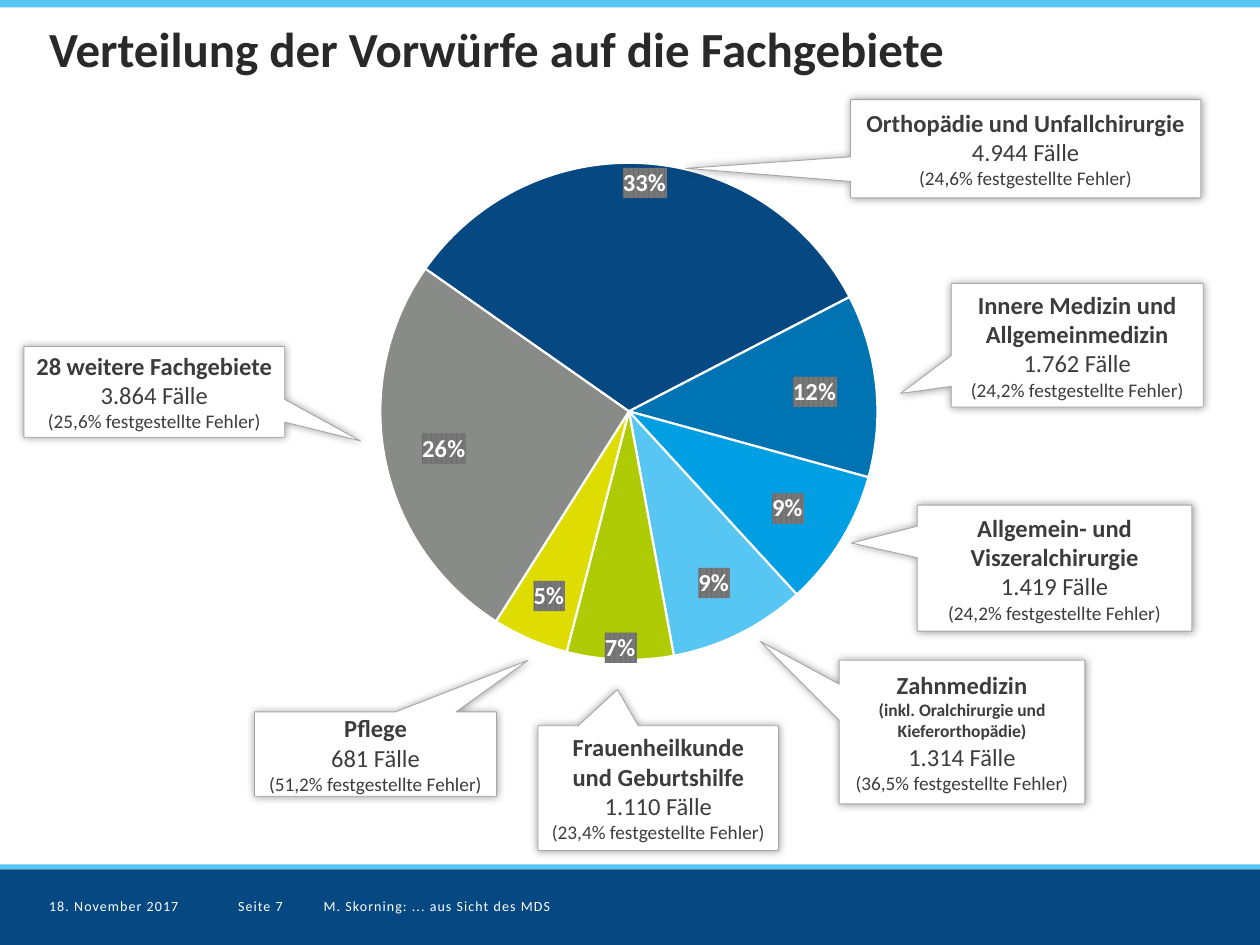
from math import cos, radians, sin

from lxml import etree
from pptx import Presentation
from pptx.chart.data import CategoryChartData
from pptx.dml.color import RGBColor
from pptx.enum.chart import XL_CHART_TYPE as ChartType, XL_LABEL_POSITION as LabelPosition
from pptx.enum.shapes import MSO_SHAPE as Shape
from pptx.enum.text import MSO_ANCHOR as Anchor, PP_ALIGN as Align
from pptx.oxml import parse_xml
from pptx.oxml.ns import nsdecls, qn
from pptx.util import Inches, Pt

FONT = "Calibri"
WHITE, TEXT, NAVY, SKY = "FFFFFF", "3B3C3B", "064882", "58C6F2"

TITLE = "Verteilung der Vorwürfe auf die Fachgebiete"

# share in percent, colour, label distance from the centre in radii
SLICES = [
    (33, NAVY, 0.92),
    (12, "0074B2", 0.75),
    (9, "009EE3", 0.75),
    (9, SKY, 0.77),
    (7, "AECB06", 0.95),
    (5, "DEDC00", 0.81),
    (26, "898B89", 0.76),
]
START_ANGLE = 305
CHART = (0.82, 0.85, 8.36, 4.84)
PIE = (3.02, 1.29, 3.95, 3.95)

# heading, note, cases, confirmed errors, place, callout tip
CALLOUTS = [
    ("Innere Medizin und Allgemeinmedizin", "", "1.762", "24,2%",
     (7.55, 2.25, 2, 0.98), (-0.7, 0.39)),
    ("Allgemein- und Viszeralchirurgie", "", "1.419", "24,2%",
     (7.28, 4.01, 2.18, 1), (-0.74, -0.2)),
    ("Orthopädie und Unfallchirurgie", "", "4.944", "24,6%",
     (6.75, 0.79, 2.78, 0.78), (-0.97, 0.2)),
    ("Zahnmedizin", "(inkl. Oralchirurgie und Kieferorthopädie)", "1.314", "36,5%",
     (6.66, 5.24, 1.95, 1.14), (-0.82, -0.63)),
    ("Pflege", "", "681", "51,2%",
     (2.02, 5.65, 1.92, 0.67), (0.63, -1.11)),
    ("28 weitere Fachgebiete", "", "3.864", "25,6%",
     (0.19, 2.75, 2.07, 0.72), (0.79, 0.54)),
    ("Frauenheilkunde und Geburtshilfe", "", "1.110", "23,4%",
     (4.27, 5.76, 1.91, 0.99), (-0.17, -0.79)),
]

# text, left, width, left inset
FOOTER = [
    ("18. November 2017", 0.39, 1.5, 0),
    ("M. Skorning: ... aus Sicht des MDS", 2.47, 5.14, 0.1),
    ("Seite 7", 1.89, 0.68, 0),
]
BANDS = [(6.86, 0.04, SKY), (6.9, 0.6, NAVY), (0, 0.06, SKY)]


def color(value):
    return RGBColor.from_string(value)


def inches(values):
    return [Inches(value) for value in values]


def style(font, size, shade, bold=False):
    font.name, font.size, font.bold = FONT, Pt(size), bold
    font.color.rgb = color(shade)


def add_filled(page, kind, place, fill):
    shape = page.shapes.add_shape(kind, *inches(place))
    shape.shadow.inherit = False
    shape.fill.solid()
    shape.fill.fore_color.rgb = color(fill)
    shape.line.fill.background()
    return shape


def add_text(page, place, text, left_inset=0):
    box = page.shapes.add_textbox(*inches(place))
    frame = box.text_frame
    frame.word_wrap = True
    frame.margin_left = Inches(left_inset)
    frame.margin_right = frame.margin_top = frame.margin_bottom = 0
    frame.text = text
    return frame


def add_callout(page, heading, note, cases, errors, place, tip):
    shape = add_filled(page, Shape.RECTANGULAR_CALLOUT, place, WHITE)
    shape.adjustments[0], shape.adjustments[1] = tip
    shape.line.color.rgb = color("A6A6A6")
    shape.line.width = Pt(0.5)
    effects = shape._element.spPr.find(qn("a:effectLst"))
    effects.append(parse_xml(
        f'<a:outerShdw {nsdecls("a")} blurRad="{Pt(5)}" dist="0" dir="0" algn="ctr" '
        'rotWithShape="0"><a:srgbClr val="000000"><a:alpha val="40000"/></a:srgbClr>'
        '</a:outerShdw>'))

    frame = shape.text_frame
    frame.word_wrap = True
    frame.vertical_anchor = Anchor.MIDDLE
    head = f"{heading}\v{note}" if note else heading
    frame.text = f"{head}\n{cases} Fälle\v({errors} festgestellte Fehler)"
    for para, sizes, bold in zip(frame.paragraphs, [(14, 10), (14, 11)], [True, False]):
        para.alignment = Align.CENTER
        for span, size in zip(para.runs, sizes):
            style(span.font, size, TEXT, bold)


def place_label(label, x, y):
    """Shift a point label by x and y, in parts of the chart, and give it a patterned ground."""
    element = label._get_or_add_dLbl()
    element.find(qn("c:idx")).addnext(parse_xml(
        f'<c:layout {nsdecls("c")}><c:manualLayout><c:x val="{x:.3f}"/><c:y val="{y:.3f}"/>'
        '</c:manualLayout></c:layout>'))
    ground = parse_xml(
        f'<c:spPr {nsdecls("c", "a")}><a:pattFill prst="dkVert">'
        '<a:fgClr><a:srgbClr val="777777"/></a:fgClr>'
        '<a:bgClr><a:srgbClr val="6A6A6A"/></a:bgClr></a:pattFill></c:spPr>')
    for old in element.findall(qn("c:spPr")):
        element.remove(old)
    element.find(qn("c:txPr")).addprevious(ground)
    for tag, shown in (("c:showVal", "0"), ("c:showPercent", "1")):
        element.find(qn(tag)).set("val", shown)


def set_pie_area(chart):
    left, top, width, height = CHART
    pie_left, pie_top, pie_width, pie_height = PIE
    parts = {"x": (pie_left - left) / width, "y": (pie_top - top) / height,
             "w": pie_width / width, "h": pie_height / height}
    plot_area = chart._chartSpace.chart.plotArea
    for old in plot_area.findall(qn("c:layout")):
        plot_area.remove(old)
    layout = etree.Element(qn("c:layout"))
    manual = etree.SubElement(layout, qn("c:manualLayout"))
    modes = {"layoutTarget": "inner", "xMode": "edge", "yMode": "edge"}
    for name, value in modes.items():
        etree.SubElement(manual, qn(f"c:{name}"), val=value)
    for name, value in parts.items():
        etree.SubElement(manual, qn(f"c:{name}"), val=f"{value:.3f}")
    plot_area.insert(0, layout)


def add_pie(page):
    shares = [share for share, _, _ in SLICES]
    data = CategoryChartData()
    data.categories = [str(number) for number in range(1, len(shares) + 1)]
    data.add_series("Series 1", shares)
    chart = page.shapes.add_chart(ChartType.PIE, *inches(CHART), data).chart
    chart.has_legend = chart.has_title = False
    style(chart.font, 10, TEXT)
    set_pie_area(chart)

    plot = chart.plots[0]
    plot.vary_by_categories = True
    pie = plot._element
    for old in pie.findall(qn("c:firstSliceAng")):
        pie.remove(old)
    etree.SubElement(pie, qn("c:firstSliceAng"), val=str(START_ANGLE))

    series = plot.series[0]
    labels = series.data_labels
    labels.show_percentage, labels.show_value = True, False
    labels.number_format, labels.number_format_is_linked = "0%", False
    labels.position = LabelPosition.CENTER
    style(labels.font, 14, WHITE, True)

    radius = PIE[2] / 2
    for index, (share, fill, distance) in enumerate(SLICES):
        point = series.points[index]
        point.format.fill.solid()
        point.format.fill.fore_color.rgb = color(fill)
        point.format.line.color.rgb = color(WHITE)
        point.format.line.width = Pt(1.25)
        style(point.data_label.font, 14, WHITE, True)
        point.data_label.position = LabelPosition.CENTER
        middle = (sum(shares[:index]) + share / 2) / sum(shares)
        angle = radians(START_ANGLE + 360 * middle)
        shift = (distance - 0.5) * radius
        place_label(point.data_label, shift * sin(angle) / CHART[2],
                    -shift * cos(angle) / CHART[3])


def main():
    deck = Presentation()
    deck.slide_width, deck.slide_height = Inches(10), Inches(7.5)
    page = deck.slides.add_slide(deck.slide_layouts[6])

    for top, height, fill in BANDS:
        add_filled(page, Shape.RECTANGLE, (0, top, 10, height), fill)
    add_pie(page)

    title = add_text(page, (0.39, 0.17, 9.21, 0.77), TITLE).paragraphs[0]
    title.line_spacing = Pt(32)
    style(title.runs[0].font, 28, "292929", True)

    for callout in CALLOUTS:
        add_callout(page, *callout)
    for text, left, width, inset in FOOTER:
        frame = add_text(page, (left, 6.89, width, 0.6), text, inset)
        frame.vertical_anchor = Anchor.MIDDLE
        font = frame.paragraphs[0].runs[0].font
        style(font, 8, WHITE)
        font._element.set("spc", "60")

    deck.save("out.pptx")


if __name__ == "__main__":
    main()
